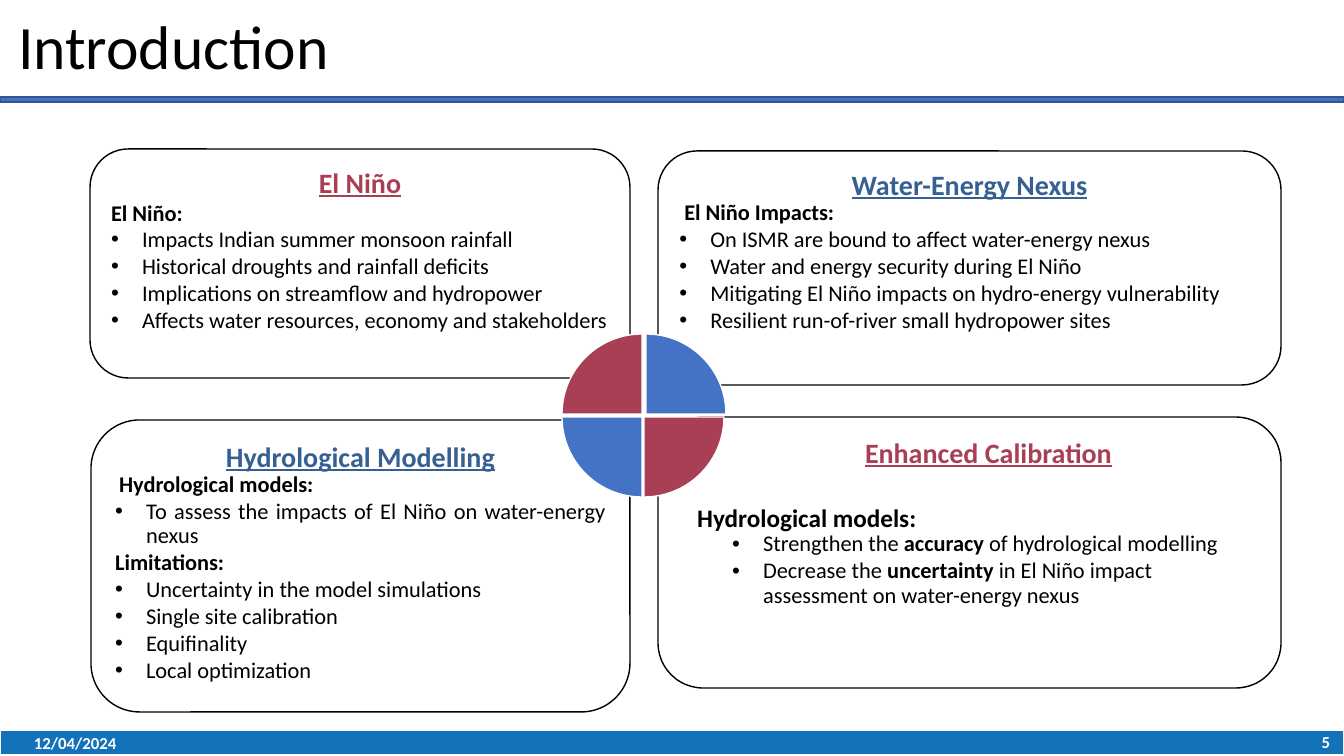
"""Build the Introduction slide: four topic panels around a quartered disc."""
from dataclasses import dataclass
from typing import Optional

from lxml.etree import SubElement
from pptx import Presentation
from pptx.dml.color import RGBColor
from pptx.enum.shapes import MSO_SHAPE as Shape
from pptx.enum.text import MSO_ANCHOR as Anchor, MSO_AUTO_SIZE as AutoSize, PP_ALIGN as Align
from pptx.oxml.ns import qn
from pptx.util import Emu, Pt

EMU_PER_PX = 914400 / 100.8


@dataclass(frozen=True)
class Theme:
    font: str = "Calibri"
    black: str = "000000"
    white: str = "FFFFFF"
    blue: str = "4472C4"
    rule_edge: str = "325491"
    footer: str = "1373BA"
    heading_blue: str = "376092"
    red: str = "A93F55"
    title_size: int = 44
    heading_size: int = 20
    lead_size: int = 18
    body_size: int = 16
    footer_size: int = 12


THEME = Theme()


@dataclass(frozen=True)
class Box:
    left: int
    top: int
    width: int
    height: int


@dataclass(frozen=True)
class Line:
    text: str
    bullet: bool = False
    indent: int = 0
    size: int = THEME.body_size
    space_before: int = 0
    tight: bool = True


@dataclass(frozen=True)
class Panel:
    heading: str
    color: str
    box: Box
    lines: list[Line]
    align: Align = Align.JUSTIFY
    tight: bool = True
    heading_indent: int = 0


@dataclass(frozen=True)
class Quarter:
    left: int
    top: int
    rotation: int
    color: str


def bullets(*texts: str, indent: int = 31) -> list[Line]:
    """Return one bulleted line for each text."""
    return [Line(text, bullet=True, indent=indent) for text in texts]


PANELS = [
    Panel("Enhanced Calibration", THEME.red, Box(658, 417, 623, 271),
          [Line("**Hydrological models:**", indent=16, size=THEME.lead_size,
                space_before=24, tight=False),
           *bullets("Strengthen the **accuracy** of hydrological modelling",
                    "Decrease the **uncertainty** in El Niño impact assessment "
                    "on water-energy nexus", indent=82)],
          align=Align.LEFT, heading_indent=38),
    Panel("El Niño", THEME.red, Box(90, 149, 540, 229),
          [Line("**El Niño:**"),
           *bullets("Impacts Indian summer monsoon rainfall",
                    "Historical droughts and rainfall deficits",
                    "Implications on streamflow and hydropower",
                    "Affects water resources, economy and stakeholders")],
          align=Align.LEFT, tight=False),
    Panel("Hydrological Modelling", THEME.heading_blue, Box(91, 420, 539, 292),
          [Line("**Hydrological models:**", indent=4),
           *bullets("To assess the impacts of El Niño on water-energy nexus"),
           Line("**Limitations:**"),
           *bullets("Uncertainty in the model simulations", "Single site calibration",
                    "Equifinality", "Local optimization")]),
    Panel("Water-Energy Nexus", THEME.heading_blue, Box(658, 151, 623, 234),
          [Line("**El Niño Impacts:**", indent=5),
           *bullets("On ISMR are bound to affect water-energy nexus",
                    "Water and energy security during El Niño",
                    "Mitigating El Niño impacts on hydro-energy vulnerability",
                    "Resilient run-of-river small hydropower sites")]),
]

QUARTER_SIZE = 80
QUARTERS = [
    Quarter(646, 334, 90, THEME.blue),
    Quarter(562, 334, 0, THEME.red),
    Quarter(562, 417, 270, THEME.blue),
    Quarter(644, 417, 180, THEME.red),
]


def px(length: int) -> Emu:
    """Turn whole pixels into EMU."""
    return Emu(round(length * EMU_PER_PX))


def place(box: Box) -> tuple[Emu, Emu, Emu, Emu]:
    """Return the EMU position and size of a box."""
    return px(box.left), px(box.top), px(box.width), px(box.height)


def write(frame, text: str, *, size: int, color: str = THEME.black, align: Align = Align.LEFT,
          underline: bool = False, bullet: bool = False, indent: int = 0,
          tight: bool = False, space_before: int = 0, space_after: int = 0) -> None:
    """Write one paragraph, with bold spans between double asterisks."""
    paragraph = frame.add_paragraph() if frame.text else frame.paragraphs[0]
    paragraph.alignment = align
    if tight:
        paragraph.line_spacing = 0.9
    if space_before:
        paragraph.space_before = Pt(space_before)
    if space_after:
        paragraph.space_after = Pt(space_after)
    properties = paragraph._p.get_or_add_pPr()
    properties.set("marL", str(px(indent)))
    properties.set("indent", str(px(-31 if bullet else 0)))
    if bullet:
        SubElement(properties, qn("a:buFont")).set("typeface", "Arial")
        SubElement(properties, qn("a:buChar")).set("char", "•")
    for index, span in enumerate(text.split("**")):
        if span:
            run = paragraph.add_run()
            run.text = span
            run.font.name = THEME.font
            run.font.size = Pt(size)
            run.font.bold = index % 2 == 1
            run.font.underline = underline
            run.font.color.rgb = RGBColor.from_string(color)


def add_block(slide, kind: Shape, box: Box, *, fill: str, line: str):
    """Add a filled and outlined preset shape without shadow."""
    shape = slide.shapes.add_shape(kind, *place(box))
    shape.shadow.inherit = False
    shape.fill.solid()
    shape.fill.fore_color.rgb = RGBColor.from_string(fill)
    shape.line.color.rgb = RGBColor.from_string(line)
    shape.line.width = Pt(1)
    return shape


def add_panel(slide, panel: Panel) -> None:
    """Draw a rounded panel with its heading and lines."""
    shape = add_block(slide, Shape.ROUNDED_RECTANGLE, panel.box,
                      fill=THEME.white, line=THEME.black)
    frame = shape.text_frame
    frame.word_wrap = True
    frame.vertical_anchor = Anchor.TOP
    write(frame, f"**{panel.heading}**", size=THEME.heading_size, color=panel.color,
          align=Align.CENTER, underline=True, indent=panel.heading_indent)
    for line in panel.lines:
        tight = panel.tight and line.tight
        write(frame, line.text, size=line.size, align=panel.align, bullet=line.bullet,
              indent=line.indent, tight=tight, space_before=line.space_before,
              space_after=2 if tight else 0)


def add_footer_text(slide, text: str, box: Box, align: Optional[Align] = Align.LEFT) -> None:
    """Add a white bold label on the footer bar."""
    frame = slide.shapes.add_textbox(*place(box)).text_frame
    frame.word_wrap = True
    frame.vertical_anchor = Anchor.MIDDLE
    write(frame, f"**{text}**", size=THEME.footer_size, color=THEME.white, align=align)


def main() -> None:
    """Build and save the presentation."""
    presentation = Presentation()
    presentation.slide_width, presentation.slide_height = px(1344), px(756)
    slide = presentation.slides.add_slide(presentation.slide_layouts[5])
    title = slide.shapes.title
    title.left, title.top, title.width, title.height = place(Box(8, -11, 967, 122))
    title.text_frame.auto_size = AutoSize.NONE
    title.text_frame.vertical_anchor = Anchor.MIDDLE
    write(title.text_frame, "Introduction", size=THEME.title_size, tight=True)
    add_block(slide, Shape.RECTANGLE, Box(0, 730, 1344, 25), fill=THEME.footer, line=THEME.white)
    add_block(slide, Shape.RECTANGLE, Box(0, 97, 1344, 5), fill=THEME.blue, line=THEME.rule_edge)
    for panel in PANELS:
        add_panel(slide, panel)
    for quarter in QUARTERS:
        box = Box(quarter.left, quarter.top, QUARTER_SIZE, QUARTER_SIZE)
        wedge = add_block(slide, Shape.PIE_WEDGE, box, fill=quarter.color, line=THEME.white)
        wedge.rotation = quarter.rotation
    add_footer_text(slide, "12/04/2024", Box(24, 730, 151, 25))
    add_footer_text(slide, "5", Box(1298, 722, 42, 40), Align.RIGHT)
    presentation.save("out.pptx")


if __name__ == "__main__":
    main()
